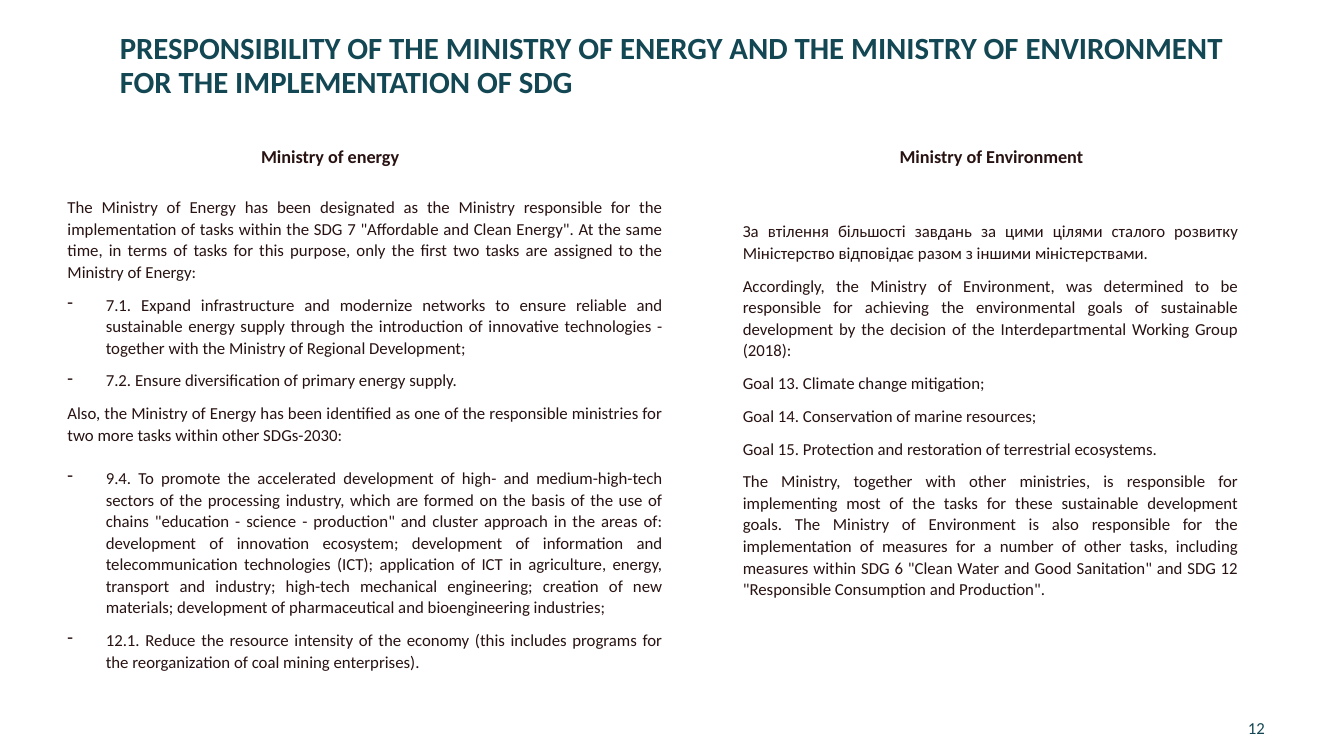
from lxml import etree
from pptx import Presentation
from pptx.dml.color import RGBColor
from pptx.enum.shapes import MSO_SHAPE
from pptx.enum.text import MSO_ANCHOR, PP_ALIGN
from pptx.oxml.ns import qn
from pptx.util import Pt

TEAL, BROWN, WHITE = "134753", "281212", "FFFFFF"
INDENT = 27.36
DASH_GAP = 15.5  # one text line, ahead of the second list

# Wording of the two columns: (text, has a dash, space after)
ENERGY = [
    ('The Ministry of Energy has been designated as the Ministry responsible for the implementation of tasks '
     'within the SDG 7 "Affordable and Clean Energy". At the same time, in terms of tasks for this purpose, '
     'only the first two tasks are assigned to the Ministry of Energy:', False, 8),
    ('7.1. Expand infrastructure and modernize networks to ensure reliable and sustainable energy supply through '
     'the introduction of innovative technologies - together with the Ministry of Regional Development;', True, 8),
    ('7.2. Ensure diversification of primary energy supply.', True, 8),
    ('Also, the Ministry of Energy has been identified as one of the responsible ministries for two more tasks '
     'within other SDGs-2030:', False, DASH_GAP),
    ('9.4. To promote the accelerated development of high- and medium-high-tech sectors of the processing '
     'industry, which are formed on the basis of the use of chains "education - science - production" and '
     'cluster approach in the areas of: development of innovation ecosystem; development of information and '
     'telecommunication technologies (ICT); application of ICT in agriculture, energy, transport and industry; '
     'high-tech mechanical engineering; creation of new materials; development of pharmaceutical and '
     'bioengineering industries;', True, 8),
    ('12.1. Reduce the resource intensity of the economy (this includes programs for the reorganization of coal '
     'mining enterprises).', True, 8),
]
ENVIRONMENT = [(text, False, 8) for text in (
    'За втілення більшості завдань за цими цілями сталого розвитку Міністерство відповідає разом з іншими '
    'міністерствами.',
    'Accordingly, the Ministry of Environment, was determined to be responsible for achieving the environmental '
    'goals of sustainable development by the decision of the Interdepartmental Working Group (2018):',
    'Goal 13. Climate change mitigation;',
    'Goal 14. Conservation of marine resources;',
    'Goal 15. Protection and restoration of terrestrial ecosystems.',
    'The Ministry, together with other ministries, is responsible for implementing most of the tasks for these '
    'sustainable development goals. The Ministry of Environment is also responsible for the implementation of '
    'measures for a number of other tasks, including measures within SDG 6 "Clean Water and Good Sanitation" '
    'and SDG 12 "Responsible Consumption and Production".',
)]


def colour(value):
    return RGBColor.from_string(value)


def set_font(para, size, value, bold=False):
    font = para.font
    font.name, font.size, font.bold = "Calibri", Pt(size), bold
    font.color.rgb = colour(value)


def add_dash(para):
    properties = para._p.get_or_add_pPr()
    properties.set("marL", str(Pt(INDENT)))
    properties.set("indent", str(-Pt(INDENT)))
    etree.SubElement(properties, qn("a:buChar")).set("char", "-")


def add_label(page, area, text, size, bold=False, anchor=MSO_ANCHOR.TOP):
    frame = page.shapes.add_textbox(*map(Pt, area)).text_frame
    frame.word_wrap, frame.vertical_anchor = True, anchor
    para = frame.paragraphs[0]
    para.text = text
    para.line_spacing = 0.9
    set_font(para, size, TEAL, bold)


def add_panel(page, area, items, size=12, bold=False, align=PP_ALIGN.JUSTIFY):
    box = page.shapes.add_shape(MSO_SHAPE.RECTANGLE, *map(Pt, area))
    box.shadow.inherit = False
    box.fill.solid()
    box.fill.fore_color.rgb = colour(WHITE)
    box.line.fill.background()
    frame = box.text_frame
    frame.word_wrap, frame.vertical_anchor = True, MSO_ANCHOR.TOP
    frame.margin_left = frame.margin_right = frame.margin_top = frame.margin_bottom = 0
    for number, (text, dashed, after) in enumerate(items):
        para = frame.add_paragraph() if number else frame.paragraphs[0]
        para.text = text
        para.alignment, para.line_spacing, para.space_after = align, 1.07, Pt(after)
        if dashed:
            add_dash(para)
        set_font(para, size, BROWN, bold)


def add_heading(page, area, text):
    add_panel(page, area, [(text, False, 6)], 13, True, PP_ALIGN.CENTER)


def main():
    deck = Presentation()
    deck.slide_width, deck.slide_height = Pt(960), Pt(540)
    page = deck.slides.add_slide(deck.slide_layouts[6])

    # Title and page number
    add_label(page, (78.5, 20.2, 815.8, 40.3),
              "РRESPONSIBILITY OF THE MINISTRY OF ENERGY AND THE MINISTRY OF ENVIRONMENT "
              "FOR THE IMPLEMENTATION OF SDG", 22, True)
    add_label(page, (884.2, 506.2, 70, 28.8), "12", 12, anchor=MSO_ANCHOR.MIDDLE)

    # Ministry of Environment
    add_panel(page, (530.6, 157, 354.2, 272.9), ENVIRONMENT)
    add_heading(page, (550.8, 103, 314.6, 15.8), "Ministry of Environment")

    # Ministry of Energy
    add_heading(page, (78.5, 102.6, 314.6, 15.8), "Ministry of energy")
    add_panel(page, (48.2, 139.7, 425.5, 364.3), ENERGY)

    deck.save("out.pptx")


if __name__ == "__main__":
    main()
